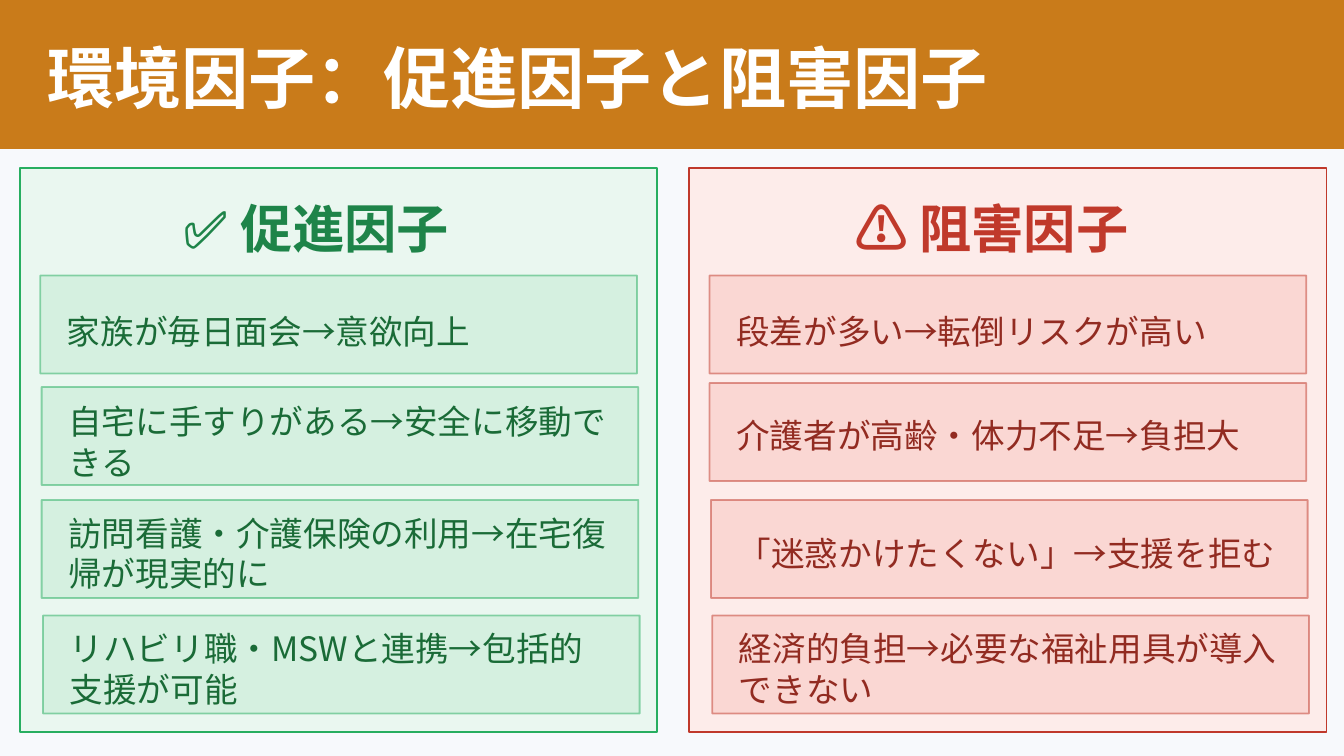
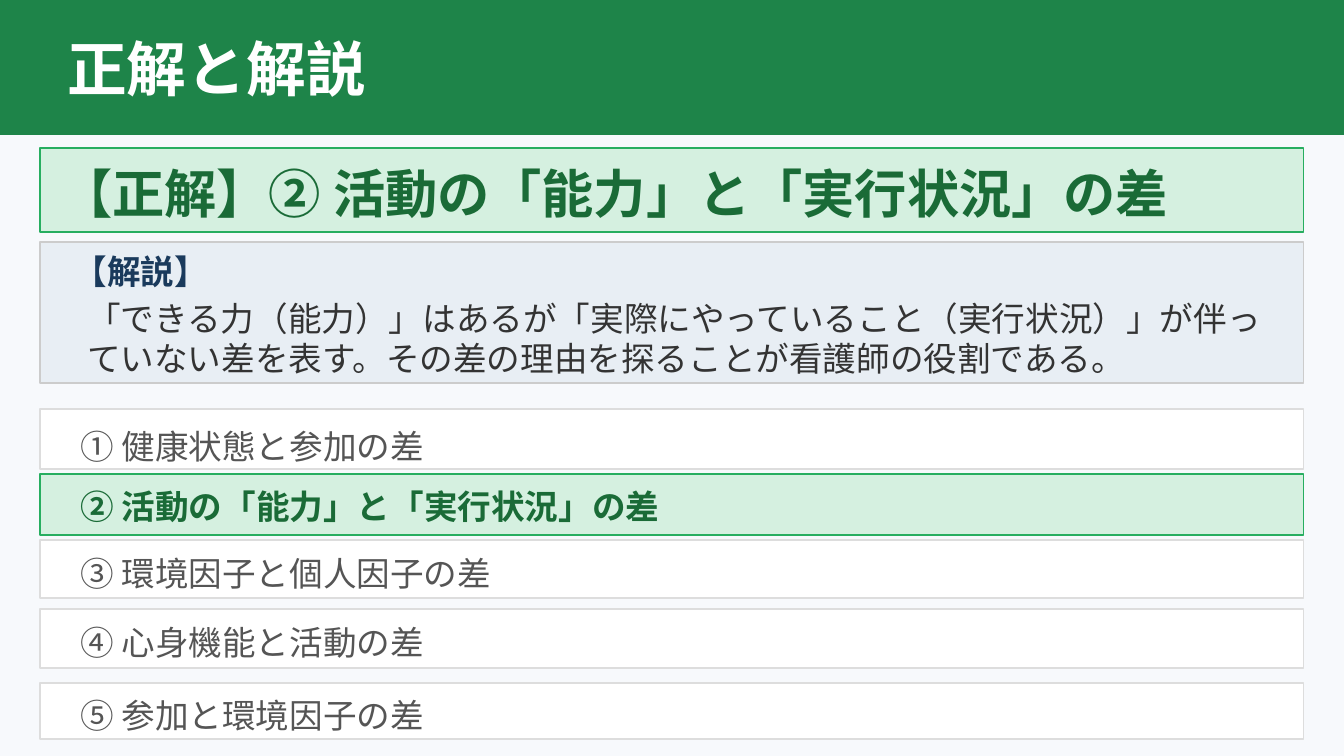
from dataclasses import dataclass

from lxml.etree import SubElement
from pptx import Presentation
from pptx.dml.color import RGBColor
from pptx.enum.shapes import MSO_SHAPE
from pptx.enum.text import MSO_ANCHOR, MSO_AUTO_SIZE, PP_ALIGN
from pptx.oxml.ns import qn
from pptx.util import Inches, Pt

WIDTH = Inches(10)
HEIGHT = WIDTH * 9 // 16
COLUMN = WIDTH / 100
ROW = HEIGHT / 56.25


@dataclass(frozen=True)
class Palette:
    """Colours of one family of panels and cards."""

    panel: str
    card: str
    edge: str
    heading: str
    ink: str


@dataclass(frozen=True)
class Theme:
    """Colours, font and type sizes shared by the slides."""

    font: str = "Noto Sans CJK JP"
    page: str = "F7F9FC"
    white: str = "FFFFFF"
    amber: str = "C97B1A"
    option_edge: str = "DDDDDD"
    option_ink: str = "555555"
    note_fill: str = "E8EEF4"
    note_edge: str = "CCCCCC"
    note_heading: str = "1A3A5C"
    note_ink: str = "333333"
    good: Palette = Palette("EAF7F0", "D5F0E0", "27AE60", "1E8449", "1A6B37")
    bad: Palette = Palette("FDECEA", "FAD7D3", "C0392B", "C0392B", "922B21")
    title_large: int = 36
    title: int = 32
    heading: int = 28
    body: int = 18


THEME = Theme()

FACILITATORS = [
    ("家族が毎日面会→意欲向上", 0, 20.5, 0.9),
    ("自宅に手すりがある→安全に移動できる", 0.1, 28.8, 0.8),
    ("訪問看護・介護保険の利用→在宅復帰が現実的に", 0.1, 37.2, 0.7),
    ("リハビリ職・MSWと連携→包括的支援が可能", 0.2, 45.8, 0.7),
]
BARRIERS = [
    ("段差が多い→転倒リスクが高い", 0, 20.5, 0.9),
    ("介護者が高齢・体力不足→負担大", 0, 28.5, 0.6),
    ("「迷惑かけたくない」→支援を拒む", 0.1, 37.2, 0.7),
    ("経済的負担→必要な福祉用具が導入できない", 0.2, 45.8, 0.7),
]
ANSWER = "② 活動の「能力」と「実行状況」の差"
OPTIONS = [
    ("① 健康状態と参加の差", 30.4, 4.5, 0.8),
    (ANSWER, 35.3, 4.5, 0.4),
    ("③ 環境因子と個人因子の差", 40.2, 4.3, 0.6),
    ("④ 心身機能と活動の差", 45.3, 4.4, 0.6),
    ("⑤ 参加と環境因子の差", 50.8, 4.2, 0.6),
]
EXPLANATION = (
    "「できる力（能力）」はあるが「実際にやっていること（実行状況）」が"
    "伴っていない差を表す。その差の理由を探ることが看護師の役割である。"
)


def cells(left, top, width, height):
    """Turn grid columns and rows into slide lengths."""
    return (round(left * COLUMN), round(top * ROW),
            round(width * COLUMN), round(height * ROW))


def write(frame, content, size=THEME.body, color=THEME.note_ink,
          bold=False, align=PP_ALIGN.LEFT):
    """Fill a text frame with one formatted paragraph."""
    frame.word_wrap = True
    frame.auto_size = MSO_AUTO_SIZE.NONE
    frame.vertical_anchor = MSO_ANCHOR.MIDDLE
    paragraph = frame.paragraphs[0]
    paragraph.alignment = align
    run = paragraph.add_run()
    run.text = content
    run.font.size = Pt(size)
    run.font.bold = bold
    run.font.color.rgb = RGBColor.from_string(color)
    run.font.name = THEME.font
    SubElement(run.font._element, qn("a:ea"), typeface=THEME.font)


def add_label(slide, area, content, **style):
    """Add a text box on the grid."""
    label = slide.shapes.add_textbox(*cells(*area))
    write(label.text_frame, content, **style)


def add_panel(slide, area, fill, edge, opacity=100):
    """Add a filled rectangle with a thin edge."""
    panel = slide.shapes.add_shape(MSO_SHAPE.RECTANGLE, *cells(*area))
    panel.shadow.inherit = False
    panel.fill.solid()
    panel.fill.fore_color.rgb = RGBColor.from_string(fill)
    panel.line.color.rgb = RGBColor.from_string(edge)
    panel.line.width = Pt(1)
    if opacity < 100:
        tint = panel.line._ln.find(".//" + qn("a:srgbClr"))
        SubElement(tint, qn("a:alpha"), val=str(opacity * 1000))


def add_titled_slide(deck, heading, band_color, band_rows, title_area, size):
    """Add a slide with its title over a coloured band."""
    slide = deck.slides.add_slide(deck.slide_layouts[5])
    title = slide.shapes.title
    add_panel(slide, (0, 0, 100, band_rows), band_color, band_color)
    slide.shapes._spTree.append(title._element)
    title.left, title.top, title.width, title.height = cells(*title_area)
    write(title.text_frame, heading, size=size, color=THEME.white, bold=True)
    return slide


def add_factor_column(slide, left, heading_left, heading, factors, palette):
    """Add a panel with a heading and its factor cards."""
    add_panel(slide, (left, 12.5, 47.4, 42), palette.panel, palette.edge)
    add_label(slide, (heading_left, 14.2, 47.4, 5.5), heading,
              size=THEME.heading, color=palette.heading, bold=True,
              align=PP_ALIGN.CENTER)
    for factor, shift, top, drop in factors:
        card_left = left + 1.5 + shift
        add_panel(slide, (card_left, top, 44.4, 7.3),
                  palette.card, palette.edge, opacity=50)
        add_label(slide, (card_left + 1, top + drop, 42.2, 6.5), factor,
                  color=palette.ink)


def add_option(slide, option, top, height, drop):
    """Add one answer option, highlighted when it is correct."""
    correct = option == ANSWER
    good = THEME.good
    add_panel(slide, (3, top, 94, height),
              good.card if correct else THEME.white,
              good.edge if correct else THEME.option_edge)
    add_label(slide, (5, top + drop, 90, height - 0.6), option,
              color=good.ink if correct else THEME.option_ink, bold=correct)


def build_factors(deck):
    """Build the slide on facilitators and barriers."""
    slide = add_titled_slide(deck, "環境因子：促進因子と阻害因子", THEME.amber,
                             11, (2.5, 0.2, 92, 11), THEME.title_large)
    add_factor_column(slide, 1.5, -0.2, "✅ 促進因子", FACILITATORS, THEME.good)
    add_factor_column(slide, 51.3, 50.1, "⚠ 阻害因子", BARRIERS, THEME.bad)


def build_answer(deck):
    """Build the slide with the answer and its explanation."""
    good = THEME.good
    slide = add_titled_slide(deck, "正解と解説", good.heading,
                             10, (4, 0, 92, 10), THEME.title)
    add_panel(slide, (3, 11, 94, 6.3), good.card, good.edge)
    add_label(slide, (3.5, 11.9, 90, 4.9), "【正解】" + ANSWER,
              size=THEME.heading, color=good.ink, bold=True)
    add_panel(slide, (3, 18, 94, 10.5), THEME.note_fill, THEME.note_edge)
    add_label(slide, (4.5, 18.5, 90, 3.3), "【解説】",
              color=THEME.note_heading, bold=True)
    add_label(slide, (5.5, 21.4, 90, 7.5), EXPLANATION)
    for option in OPTIONS:
        add_option(slide, *option)


def main():
    """Build and save the deck."""
    deck = Presentation()
    deck.slide_width, deck.slide_height = WIDTH, HEIGHT
    page = deck.slide_master.background.fill
    page.solid()
    page.fore_color.rgb = RGBColor.from_string(THEME.page)
    build_factors(deck)
    build_answer(deck)
    deck.save("out.pptx")


if __name__ == "__main__":
    main()
